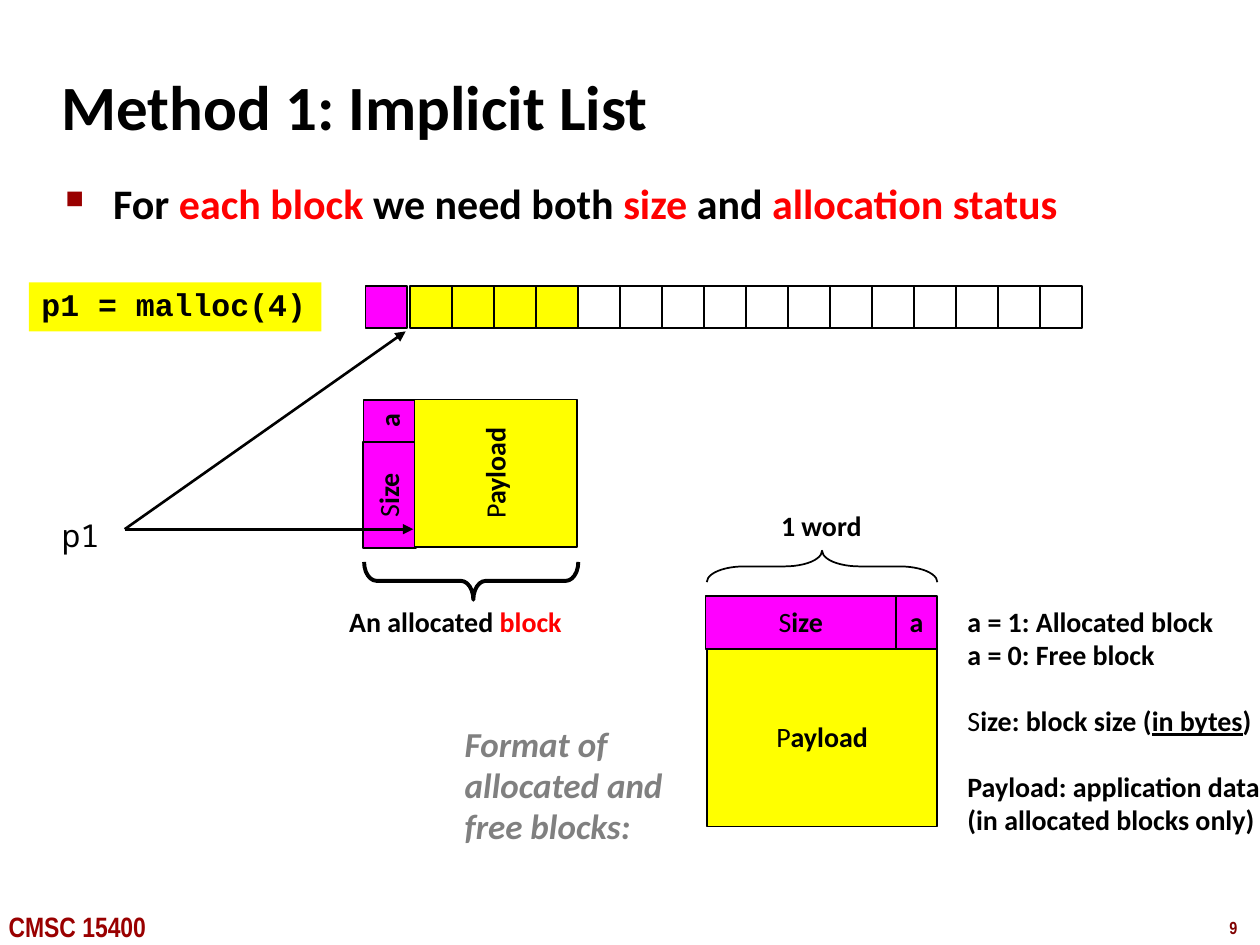
from lxml import etree
from pptx import Presentation
from pptx.dml.color import RGBColor
from pptx.enum.shapes import MSO_CONNECTOR, MSO_SHAPE
from pptx.enum.text import MSO_ANCHOR, MSO_AUTO_SIZE, PP_ALIGN
from pptx.oxml.ns import qn
from pptx.util import Inches, Pt

RECT = MSO_SHAPE.RECTANGLE
LEFT_BRACE = MSO_SHAPE.LEFT_BRACE
RIGHT_BRACE = MSO_SHAPE.RIGHT_BRACE
STRAIGHT = MSO_CONNECTOR.STRAIGHT
TOP, MIDDLE = MSO_ANCHOR.TOP, MSO_ANCHOR.MIDDLE
LEFT, CENTER = PP_ALIGN.LEFT, PP_ALIGN.CENTER
GROW, FIXED = MSO_AUTO_SIZE.SHAPE_TO_FIT_TEXT, MSO_AUTO_SIZE.NONE

WIDTH, HEIGHT = Inches(10), Inches(7.5)
COLS = 100
UNIT = WIDTH / COLS
COLORS = {
    "black": "000000", "white": "FFFFFF", "red": "FF0000", "gray": "808080",
    "pink": "FF00FF", "yellow": "FFFF00", "brick": "990000", "maroon": "800000",
}
SIZE = [("S", "thin"), ("ize", "")]
PAYLOAD = [("P", "thin"), ("ayload", "")]


def rgb(name):
    return RGBColor.from_string(COLORS[name])


def grid(*cells):
    return [round(cell * UNIT) for cell in cells]


def write(frame, lines, size=16, font="Calibri", color="black", bold=True,
          italic=False, space=0.98, align=LEFT, wrap=False, anchor=TOP, fit=GROW):
    frame.word_wrap = wrap
    frame.vertical_anchor = anchor
    frame.auto_size = fit
    for row, line in enumerate(lines):
        para = frame.paragraphs[0] if row == 0 else frame.add_paragraph()
        para.alignment = align
        para.line_spacing = space
        parts = [(line, "")] if isinstance(line, str) else line
        para.text = parts[0][0]
        for text, _ in parts[1:]:
            para.add_run().text = text
        for run, (_, mark) in zip(para.runs, parts):
            face = run.font
            face.name, face.size = font, Pt(size)
            face.bold = bold and mark != "thin"
            face.italic = italic
            face.underline = mark == "under"
            face.color.rgb = rgb("red" if mark == "red" else color)


def label(slide, box, lines, **style):
    frame = slide.shapes.add_textbox(*grid(*box)).text_frame
    write(frame, lines, **style)
    return frame


def block(slide, box, fill, line=None, turn=0, edge=True):
    shape = slide.shapes.add_shape(RECT, *grid(*box))
    shape.shadow.inherit = False
    shape.rotation = turn
    shape.fill.solid()
    shape.fill.fore_color.rgb = rgb(fill)
    if edge:
        shape.line.color.rgb = rgb("black")
        shape.line.width = Pt(1)
    else:
        shape.line.fill.background()
    if line:
        write(shape.text_frame, [line], align=CENTER, anchor=MIDDLE, fit=FIXED)
    return shape


def brace(slide, kind, box, bends, width):
    shape = slide.shapes.add_shape(kind, *grid(*box))
    shape.shadow.inherit = False
    shape.rotation = 270
    shape.fill.background()
    shape.line.color.rgb = rgb("black")
    shape.line.width = Pt(width)
    for spot, bend in enumerate(bends):
        shape.adjustments[spot] = bend


def arrow(slide, start, end):
    line = slide.shapes.add_connector(STRAIGHT, *grid(*start, *end))
    line.line.color.rgb = rgb("black")
    line.line.width = Pt(1.5)
    tip = etree.SubElement(line.line._get_or_add_ln(), qn("a:tailEnd"))
    tip.set("type", "triangle")
    etree.SubElement(line._element.spPr, qn("a:effectLst"))


def bullet(para):
    props = para._p.get_or_add_pPr()
    props.set("marL", str(Inches(0.38)))
    props.set("indent", str(-Inches(0.38)))
    tint = etree.SubElement(props, qn("a:buClr"))
    etree.SubElement(tint, qn("a:srgbClr")).set("val", COLORS["brick"])
    etree.SubElement(props, qn("a:buSzPct")).set("val", "60000")
    etree.SubElement(props, qn("a:buChar")).set("char", "■")


def heading(slide):
    label(slide, (3.9, 5.2, 72.1, 6.3), ["Method 1: Implicit List"], size=36,
          space=None, wrap=True, anchor=MIDDLE, fit=FIXED)
    point = [("For ", ""), ("each block ", "red"), ("we need both ", ""),
             ("size", "red"), (" and ", ""), ("allocation status", "red")]
    frame = label(slide, (4.2, 13.6, 90.3, 8.7), [point], size=24,
                  space=None, wrap=True, fit=FIXED)
    bullet(frame.paragraphs[0])


def heap(slide):
    side = COLS / 30
    block(slide, (29, 22.7, side, side), "pink")
    for spot in range(1, 17):
        fill = "yellow" if spot < 5 else "white"
        block(slide, (29.2 + spot * side, 22.7, side, side), fill)
    call = block(slide, (2.3, 22.4, 23.2, 3.9), "yellow", edge=False)
    write(call.text_frame, ["p1 = malloc(4)"], size=18, font="Courier New", space=0.94)


def sample(slide):
    block(slide, (26.7, 37.2, 8.4, 4.2), "pink", SIZE, 270)
    block(slide, (29.3, 31.3, 3.3, 4.2), "pink", "a", 270)
    label(slide, (26.5, 47.6, 19.3, 3.7),
          [[("An allocated ", ""), ("block", "red")]], align=CENTER)
    brace(slide, LEFT_BRACE, (35.9, 37.6, 3, 17), (0.33, 0.51), 2.25)
    label(slide, (3.9, 40.5, 5.1, 4), ["p1"], size=18, font="Noto Sans Mono",
          bold=False, space=None)
    for end in ((32.8, 42), (32.2, 26.3)):
        arrow(slide, (9.9, 42), end)
    block(slide, (33.5, 31.1, 11.7, 12.9), "yellow", PAYLOAD, 270)


def layout(slide):
    label(slide, (61, 40, 8.5, 3.7), ["1 word"])
    block(slide, (56.1, 51.5, 18.3, 14.1), "yellow", PAYLOAD)
    brace(slide, RIGHT_BRACE, (64, 35.8, 2.5, 18.3), (1.19, 0.5), 1)
    block(slide, (56, 47.3, 15.1, 4.2), "pink", SIZE)
    block(slide, (71.1, 47.3, 3.3, 4.2), "pink", "a")
    label(slide, (35.9, 57, 18.7, 10.9),
          ["Format of", "allocated and", "free blocks:"],
          size=20, color="gray", italic=True)
    frame = label(slide, (75.8, 47.6, 26.1, 22.2), [
        "a = 1: Allocated block",
        "a = 0: Free block",
        [("S", "thin"), ("ize: block size (", ""), ("in bytes", "under"), (")", "")],
        "Payload: application data",
        "(in allocated blocks only)",
    ])
    for row in (2, 3):
        frame.paragraphs[row].space_before = Pt(19)


def footer(slide):
    style = {"font": "Arial Narrow", "space": None}
    label(slide, (96.6, 72.3, 3.4, 2.7), ["9"], size=10, color="maroon", **style)
    label(slide, (-0.3, 71.7, 14.2, 3.7), ["CMSC 15400"], size=16, color="brick", **style)


def main():
    deck = Presentation()
    deck.slide_width, deck.slide_height = WIDTH, HEIGHT
    slide = deck.slides.add_slide(deck.slide_layouts[6])
    for draw in (footer, heading, heap, sample, layout):
        draw(slide)
    deck.save("out.pptx")


if __name__ == "__main__":
    main()
